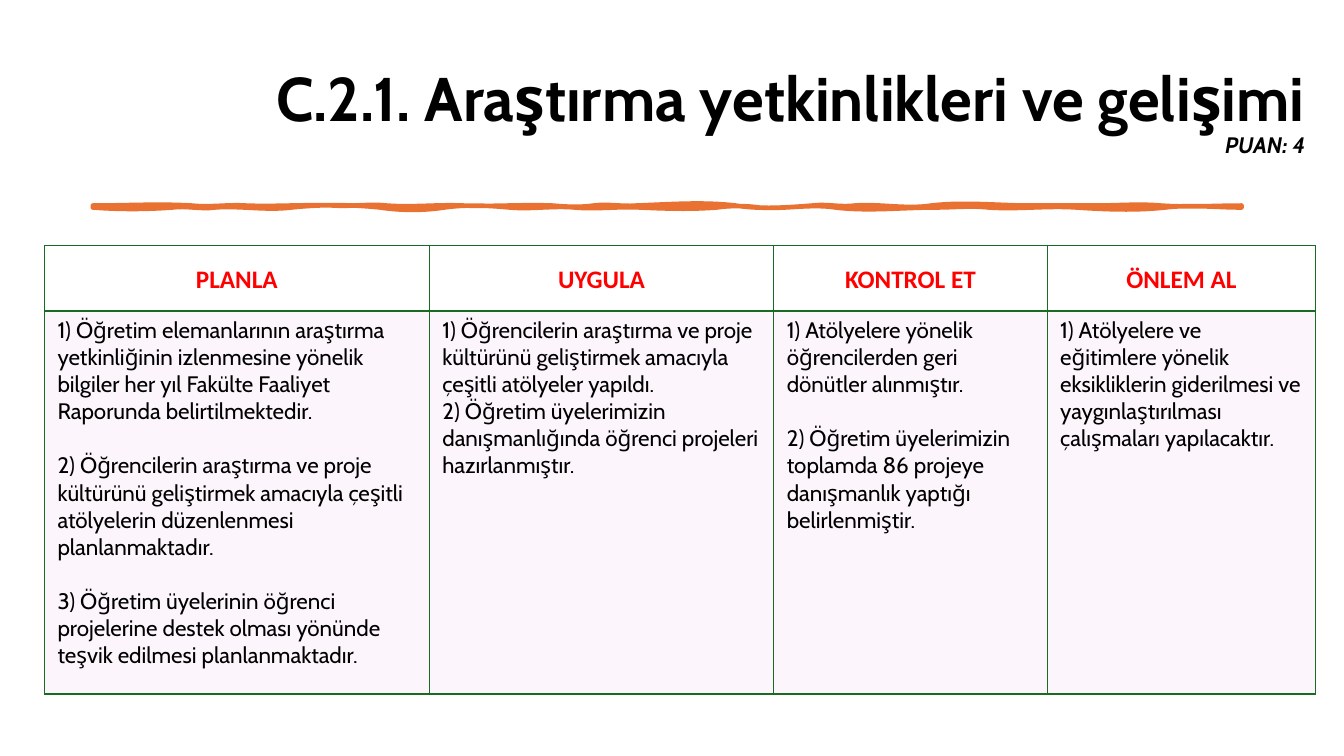
from typing import NamedTuple

from lxml import etree
from pptx import Presentation
from pptx.dml.color import RGBColor
from pptx.enum.text import MSO_ANCHOR as Anchor, PP_ALIGN as Align
from pptx.oxml.ns import qn
from pptx.util import Cm, Pt

GREEN, ORANGE, PINK, RED, BLACK = "196B24", "E97132", "F2CFEE", "FF0000", "000000"


class Column(NamedTuple):
    heading: str
    width: float
    items: list[str]
    gap: float  # points between items


class Bend(NamedTuple):
    x: float  # end of the bend, cm
    pull: float  # vertical offset of its last control point, cm


COLUMNS = [
    Column("PLANLA", 9.7, [
        "1) Öğretim elemanlarının araştırma yetkinliğinin izlenmesine yönelik "
        "bilgiler her yıl Fakülte Faaliyet Raporunda belirtilmektedir.",
        "2) Öğrencilerin araştırma ve proje kültürünü geliştirmek amacıyla "
        "çeşitli atölyelerin düzenlenmesi planlanmaktadır.",
        "3) Öğretim üyelerinin öğrenci projelerine destek olması yönünde "
        "teşvik edilmesi planlanmaktadır."], 19.4),
    Column("UYGULA", 8.68, [
        "1) Öğrencilerin araştırma ve proje kültürünü geliştirmek amacıyla "
        "çeşitli atölyeler yapıldı.",
        "2) Öğretim üyelerimizin danışmanlığında öğrenci projeleri "
        "hazırlanmıştır."], 0),
    Column("KONTROL ET", 6.89, [
        "1) Atölyelere yönelik öğrencilerden geri dönütler alınmıştır.",
        "2) Öğretim üyelerimizin toplamda 86 projeye danışmanlık yaptığı "
        "belirlenmiştir."], 19.4),
    Column("ÖNLEM AL", 6.77, [
        "1) Atölyelere ve eğitimlere yönelik eksikliklerin giderilmesi ve "
        "yaygınlaştırılması çalışmaları yapılacaktır."], 0),
]
ROW_HEIGHTS = [1.65, 9.65]

# Upper edge of the brush stroke runs right, lower edge runs back
LEFT, RIGHT, UPPER_Y, LOWER_Y = 2.34, 31.29, 5.18, 5.23
UPPER = [Bend(*b) for b in (
    (4.83, -.05), (6.2, -.03), (8.41, -.03), (9.75, -.05), (11.68, -.03),
    (13.92, -.03), (14.96, .05), (16.03, .03), (18.54, -.1), (20.47, .05),
    (21.54, .05), (23.47, .1), (25.98, 0), (27.61, 0), (29.26, -.05), (RIGHT, 0))]
LOWER = [Bend(*b) for b in (
    (29.36, -.08), (27.13, .05), (24.92, .05), (23.57, 0), (21.06, .1),
    (19.13, .05), (18.06, -.05), (16.13, .03), (14.48, .05), (12.85, .05),
    (11.2, -.08), (9.58, .08), (7.34, -.08), (5.41, -.05), (4.34, -.05), (LEFT, .05))]


def rgb(color: str) -> RGBColor:
    return RGBColor.from_string(color)


def add_run(p, text: str, size: float, font: str = "Cabin", color: str = BLACK,
            bold: bool = False, italic: bool = False) -> None:
    r = p.add_run()
    r.text = text
    r.font.name, r.font.size = font, Pt(size)
    r.font.bold, r.font.italic = bold, italic
    r.font.color.rgb = rgb(color)


def curve_edge(lines: list, x: float, y: float, bends: list[Bend]) -> None:
    """Turn lines into smooth curves: each mirrors the pull of the last."""
    last = 0.0
    for line, bend in zip(lines, bends):
        third = (bend.x - x) / 3
        line.tag = qn("a:cubicBezTo")
        controls = ((x + third, y - last), (bend.x - third, y + bend.pull))
        for i, (cx, cy) in enumerate(controls):
            pt = etree.Element(qn("a:pt"), x=str(Cm(cx - LEFT)),
                               y=str(Cm(cy - UPPER_Y)))
            line.insert(i, pt)
        x, last = bend.x, bend.pull


def add_stroke(s) -> None:
    knots = [(b.x, UPPER_Y) for b in UPPER] + [(RIGHT, LOWER_Y)]
    knots += [(b.x, LOWER_Y) for b in LOWER]
    builder = s.shapes.build_freeform(Cm(LEFT), Cm(UPPER_Y))
    builder.add_line_segments([(Cm(x), Cm(y)) for x, y in knots], close=True)
    sp = builder.convert_to_shape()
    lines = list(sp._element.iter(qn("a:lnTo")))
    curve_edge(lines[:len(UPPER)], LEFT, UPPER_Y, UPPER)
    curve_edge(lines[len(UPPER) + 1:], RIGHT, LOWER_Y, LOWER)
    sp.shadow.inherit = False
    sp.fill.solid()
    sp.fill.fore_color.rgb = rgb(ORANGE)
    sp.line.color.rgb = rgb(ORANGE)
    sp.line.width = Pt(3.25)


def set_borders(cell, bottom: float) -> None:
    tc_pr = cell._tc.get_or_add_tcPr()
    for side, width in (("L", 1), ("R", 1), ("T", 1), ("B", bottom)):
        ln = etree.SubElement(tc_pr, qn(f"a:ln{side}"), w=str(Pt(width)))
        fill = etree.SubElement(ln, qn("a:solidFill"))
        etree.SubElement(fill, qn("a:srgbClr"), val=GREEN)


def set_margins(cell, x: float, y: float) -> None:
    cell.margin_left = cell.margin_right = Cm(x)
    cell.margin_top = cell.margin_bottom = Cm(y)


def fill_heading(cell, col: Column) -> None:
    set_borders(cell, bottom=2)
    cell.fill.background()
    set_margins(cell, 0.13, 0)
    cell.vertical_anchor = Anchor.MIDDLE
    p = cell.text_frame.paragraphs[0]
    p.alignment, p.line_spacing, p.space_after = Align.CENTER, 1.07, Pt(8)
    add_run(p, col.heading, 18, "Calibri", RED, bold=True)


def fill_body(cell, col: Column) -> None:
    set_borders(cell, bottom=1)
    cell.fill.solid()
    cell.fill.fore_color.rgb = rgb(PINK)
    tint = cell._tc.tcPr.find(qn("a:solidFill"))[0]
    etree.SubElement(tint, qn("a:alpha"), val="20000")
    set_margins(cell, 0.33, 0.15)
    tf = cell.text_frame
    for i, item in enumerate(col.items):
        p = tf.add_paragraph() if i else tf.paragraphs[0]
        p.space_before = Pt(col.gap if i else 0)
        add_run(p, item, 16)


def add_stages(s) -> None:
    frame = s.shapes.add_table(
        2, len(COLUMNS), Cm(1.12), Cm(6.19),
        Cm(sum(c.width for c in COLUMNS)), Cm(sum(ROW_HEIGHTS)))
    table = frame.table
    table.first_row = table.horz_banding = False
    for row, height in zip(table.rows, ROW_HEIGHTS):
        row.height = Cm(height)
    for i, col in enumerate(COLUMNS):
        table.columns[i].width = Cm(col.width)
        fill_heading(table.cell(0, i), col)
        fill_body(table.cell(1, i), col)


def add_title(s) -> None:
    title = s.shapes.title
    title.left, title.top = Cm(0.89), Cm(1.02)
    title.width, title.height = Cm(32.26), Cm(3.68)
    tf = title.text_frame
    tf.word_wrap, tf.vertical_anchor = True, Anchor.MIDDLE
    p = tf.paragraphs[0]
    p.alignment, p.line_spacing = Align.RIGHT, 0.9
    add_run(p, "C.2.1. Araştırma yetkinlikleri ve gelişimi", 44, bold=True)
    p.add_line_break()
    add_run(p, "PUAN: 4", 16, bold=True, italic=True)


def main() -> None:
    prs = Presentation()
    prs.slide_width, prs.slide_height = Cm(33.87), Cm(19.05)
    s = prs.slides.add_slide(prs.slide_layouts[5])
    add_title(s)
    add_stroke(s)
    add_stages(s)
    prs.save("out.pptx")


if __name__ == "__main__":
    main()
